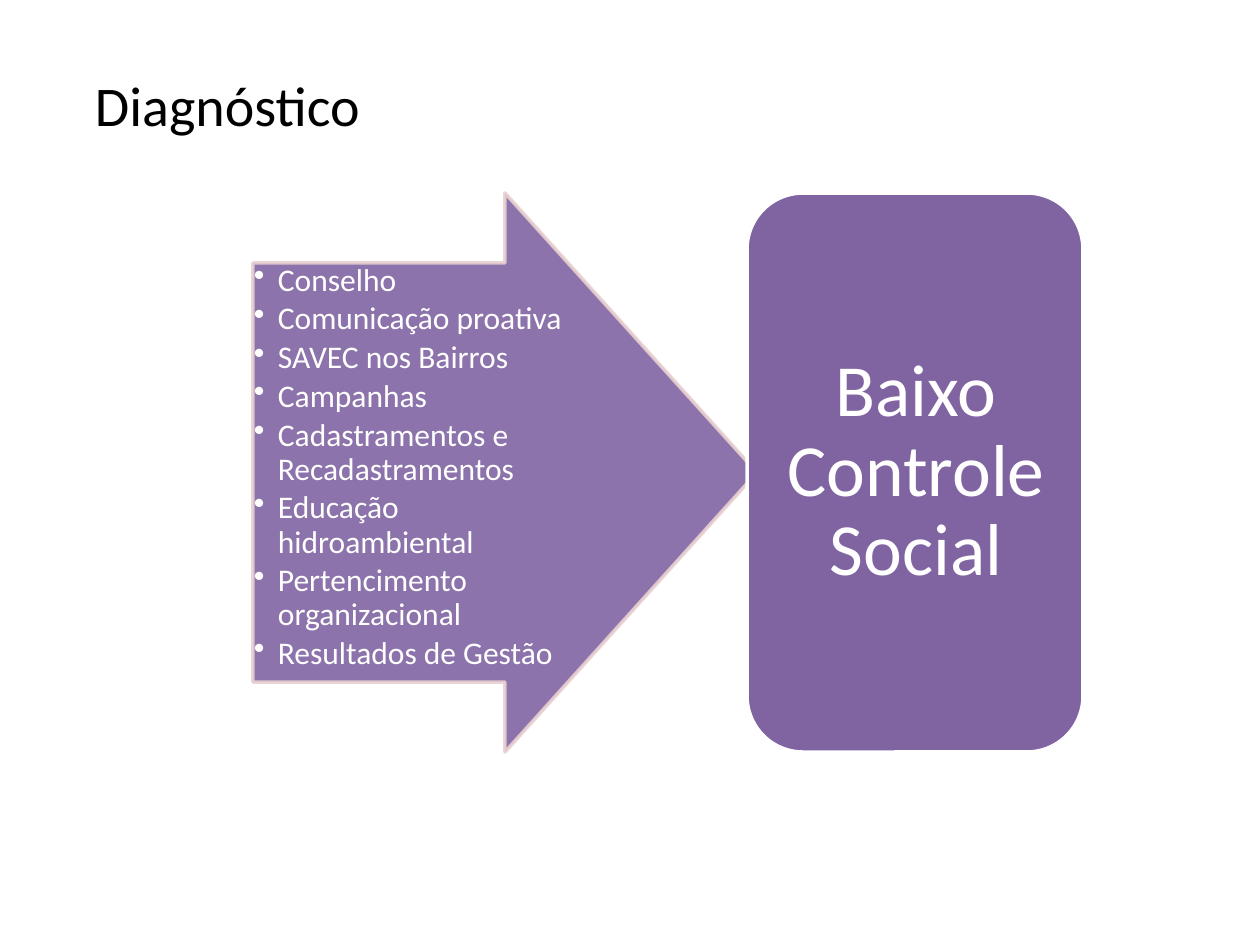
from lxml import etree
from pptx import Presentation, util as u
from pptx.dml.color import RGBColor
from pptx.enum import shapes, text
from pptx.oxml.ns import qn

PX = u.Inches(1) / 126
PURPLE, PINK, WHITE, BLACK = "8064A2", "E8D0D0", "FFFFFF", "000000"


def paint(color_format, color, opacity=100):
    """Apply a solid hex colour to a fill or a line's fill."""
    color_format.solid()
    color_format.fore_color.rgb = RGBColor.from_string(color)
    if opacity < 100:
        srgb = color_format._xPr.find(".//" + qn("a:srgbClr"))
        etree.SubElement(srgb, qn("a:alpha"), val=str(opacity * 1000))


def add_text(box, lines, size, color, margins, space_after=0, bullet=False):
    """Add a wrapped text box, one paragraph for each line, and return its frame."""
    frame = slide.shapes.add_textbox(*(round(v * PX) for v in box)).text_frame
    frame.word_wrap = True
    side, end = (round(m * PX) for m in margins)
    frame.margin_left = frame.margin_right = side
    frame.margin_top = frame.margin_bottom = end
    frame.text = "\n".join(lines)
    for paragraph in frame.paragraphs:
        if bullet:
            props = paragraph._p.get_or_add_pPr()
            indent = round(24 * PX)
            props.set("marL", str(indent))
            props.set("indent", str(-indent))
            etree.SubElement(props, qn("a:buChar"), char="•")
        if space_after:
            paragraph.line_spacing = 0.9
            paragraph.space_after = u.Pt(space_after)
        paragraph.font.name = "Calibri"
        paragraph.font.size = u.Pt(size)
        paragraph.font.color.rgb = RGBColor.from_string(color)
    return frame


deck = Presentation()
deck.slide_width, deck.slide_height = u.Inches(10), u.Inches(7.5)
slide = deck.slides.add_slide(deck.slide_layouts[6])

add_text((82, 65, 1096, 595), ["Diagnóstico"], 32, BLACK, (13, 6))

# Each block: preset, box, adjustments, line colour, opacity
blocks = [
    (shapes.MSO_SHAPE.RIGHT_ARROW, (253, 193, 504, 559), (0.75, 0.5), PINK, 90),
    (shapes.MSO_SHAPE.ROUNDED_RECTANGLE, (747, 193, 336, 559), (0.1667,), WHITE, 100),
]
for preset, box, adjustments, outline, opacity in blocks:
    block = slide.shapes.add_shape(preset, *(round(v * PX) for v in box))
    block.shadow.inherit = False
    for index, value in enumerate(adjustments):
        block.adjustments[index] = value
    paint(block.fill, PURPLE, opacity)
    paint(block.line.fill, outline, opacity)
    block.line.width = u.Pt(2)

causes = [
    "Conselho",
    "Comunicação proativa",
    "SAVEC nos Bairros",
    "Campanhas",
    "Cadastramentos e Recadastramentos",
    "Educação hidroambiental",
    "Pertencimento organizacional",
    "Resultados de Gestão",
]
add_text((253, 263, 315, 420), causes, 18, WHITE, (1, 1), space_after=2.7, bullet=True)

result = add_text((764, 209, 304, 527), ["Baixo Controle Social"], 42, WHITE, (21, 11),
                  space_after=14.7)
result.vertical_anchor = text.MSO_ANCHOR.MIDDLE
result.paragraphs[0].alignment = text.PP_ALIGN.CENTER

deck.save("out.pptx")
